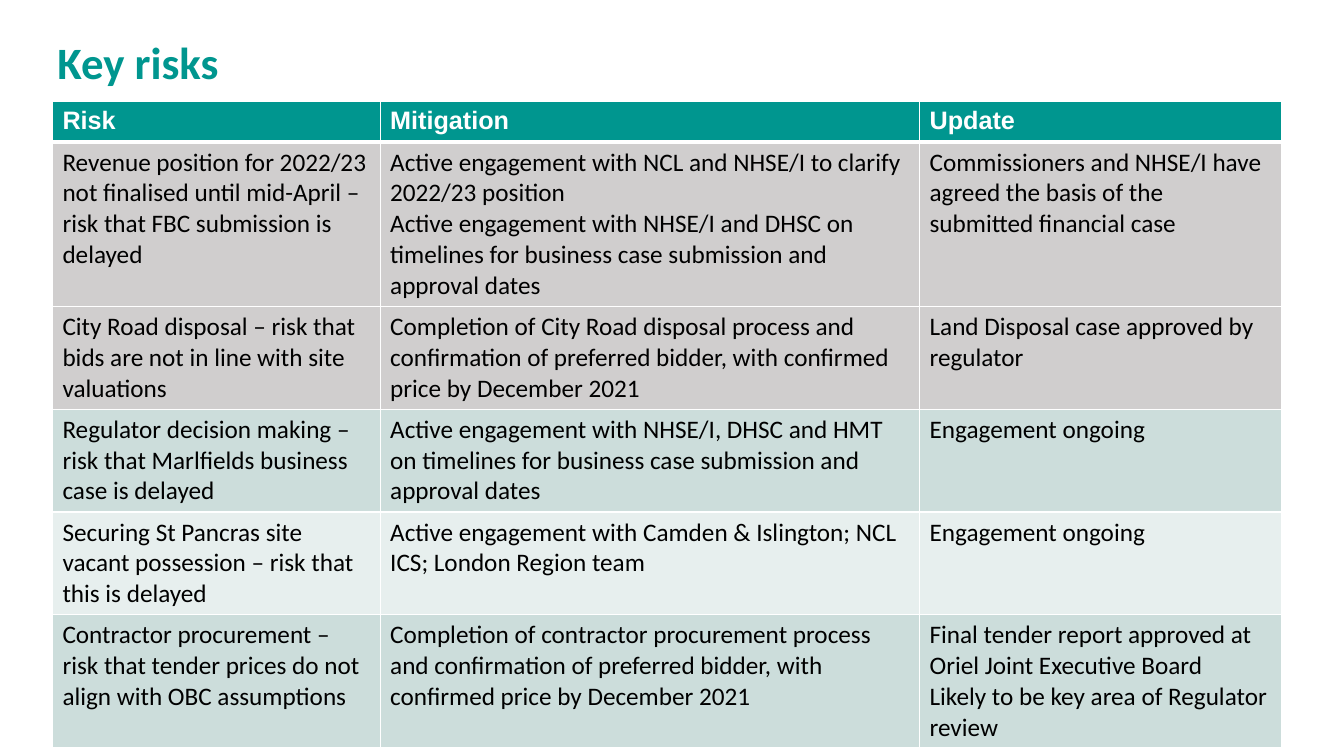
"""Build the key risks slide: a heading above a table of risks, mitigations and updates."""
from lxml.etree import SubElement
from pptx import Presentation
from pptx.dml.color import RGBColor
from pptx.enum.text import MSO_ANCHOR
from pptx.oxml.ns import qn
from pptx.util import Inches, Pt

HEADING = "Key risks"
HEADERS = ["Risk", "Mitigation", "Update"]
RISKS = [
    {"fill": "D0CECE", "height": 1.63, "cells": [
        ["Revenue position for 2022/23 not finalised until mid-April – risk that FBC submission is delayed"],
        ["Active engagement with NCL and NHSE/I to clarify 2022/23 position",
         "Active engagement with NHSE/I and DHSC on timelines for business case submission and approval dates"],
        ["Commissioners and NHSE/I have agreed the basis of the submitted financial case"]]},
    {"fill": "D0CECE", "height": 1.02, "cells": [
        ["City Road disposal – risk that bids are not in line with site valuations"],
        ["Completion of City Road disposal process and confirmation of preferred bidder, "
         "with confirmed price by December 2021"],
        ["Land Disposal case approved by regulator"]]},
    {"fill": "CCDDDB", "height": 1.02, "cells": [
        ["Regulator decision making – risk that Marlfields business case is delayed"],
        ["Active engagement with NHSE/I, DHSC and HMT on timelines for business case submission and approval dates"],
        ["Engagement ongoing"]]},
    {"fill": "E7EFEE", "height": 1.02, "cells": [
        ["Securing St Pancras site vacant possession – risk that this is delayed"],
        ["Active engagement with Camden & Islington; NCL ICS; London Region team"],
        ["Engagement ongoing"]]},
    {"fill": "CCDDDB", "height": 1.32, "cells": [
        ["Contractor procurement – risk that tender prices do not align with OBC assumptions"],
        ["Completion of contractor procurement process and confirmation of preferred bidder, "
         "with confirmed price by December 2021"],
        ["Final tender report approved at Oriel Joint Executive Board",
         "Likely to be key area of Regulator review"]]},
]
TEAL, WHITE, BLACK = "00968F", "FFFFFF", "000000"
COLUMN_WIDTHS = [3.25, 5.35, 3.59]
HEADER_HEIGHT = 0.4


def paint(color_format, hex_color):
    color_format.rgb = RGBColor.from_string(hex_color)


def write(frame, lines, size, font_name, hex_color, bold):
    for index, line in enumerate(lines):
        paragraph = frame.add_paragraph() if index else frame.paragraphs[0]
        run = paragraph.add_run()
        run.text = line
        run.font.size = Pt(size)
        run.font.name = font_name
        run.font.bold = bold
        paint(run.font.color, hex_color)


def underline_cell(cell, hex_color, points):
    properties = cell._tc.get_or_add_tcPr()
    border = SubElement(properties, qn("a:lnB"), w=str(Pt(points)))
    border_fill = SubElement(border, qn("a:solidFill"))
    SubElement(border_fill, qn("a:srgbClr"), val=hex_color)


def add_heading(slide):
    frame = slide.shapes.add_textbox(Inches(0.57), Inches(0.05), Inches(10.23), Inches(1.12)).text_frame
    frame.word_wrap = True
    frame.vertical_anchor = MSO_ANCHOR.MIDDLE
    frame.margin_left = 0
    write(frame, [HEADING], 32, "Calibri", TEAL, True)


def add_risks(slide):
    header = {"fill": TEAL, "height": HEADER_HEIGHT, "cells": [[label] for label in HEADERS]}
    rows = [header] + RISKS
    table = slide.shapes.add_table(
        len(rows), len(HEADERS), Inches(0.52), Inches(1.01),
        Inches(sum(COLUMN_WIDTHS)), Inches(sum(row["height"] for row in rows))).table
    for column, width in zip(table.columns, COLUMN_WIDTHS):
        column.width = Inches(width)
    for row_index, row in enumerate(rows):
        table.rows[row_index].height = Inches(row["height"])
        style = ("Calibri", BLACK, False) if row_index else ("Arial", WHITE, True)
        for column_index, lines in enumerate(row["cells"]):
            cell = table.cell(row_index, column_index)
            if row is header:
                underline_cell(cell, WHITE, 3)
            cell.fill.solid()
            paint(cell.fill.fore_color, row["fill"])
            write(cell.text_frame, lines, 18, *style)


def main():
    presentation = Presentation()
    presentation.slide_width = Inches(13.33)
    presentation.slide_height = Inches(7.5)
    slide = presentation.slides.add_slide(presentation.slide_layouts[6])
    add_heading(slide)
    add_risks(slide)
    presentation.save("out.pptx")


if __name__ == "__main__":
    main()
